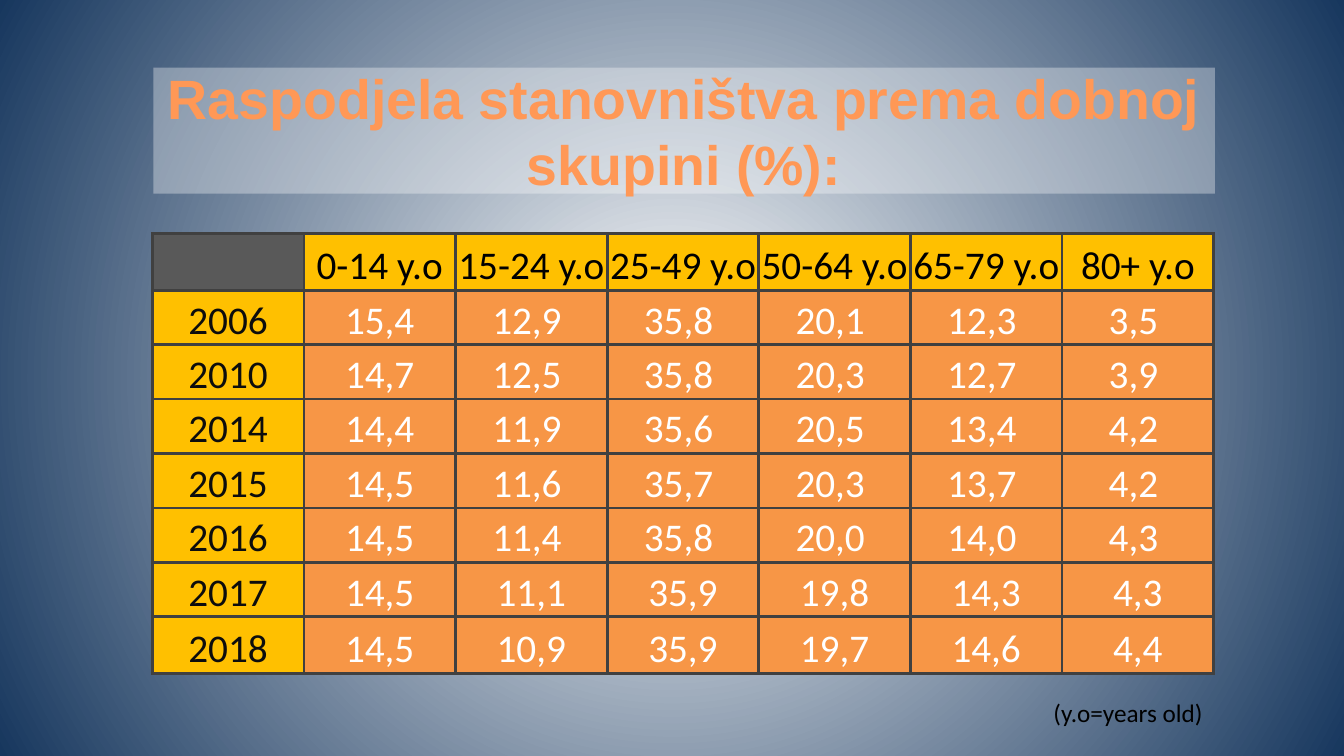
from lxml import etree
from pptx import Presentation
from pptx.dml.color import RGBColor
from pptx.enum.text import MSO_ANCHOR as Anchor, MSO_AUTO_SIZE as AutoSize, PP_ALIGN as Align
from pptx.oxml import parse_xml
from pptx.oxml.ns import nsdecls, qn
from pptx.util import Inches, Pt

COLORS = {
    "center": "FFFFFF", "edge": "17375E", "panel": "FFFFFF", "title": "FF9856",
    "corner": "595959", "header": "FFC000", "body": "F79646", "border": "404040",
    "header_text": "000000", "year_text": "0D0D0D", "value_text": "FFFFFF",
}
NBSP = chr(160)
AGE_GROUPS = ["", "0-14 y.o", "15-24 y.o", "25-49 y.o", "50-64 y.o", "65-79 y.o", "80+ y.o"]
SHARES = [
    ["2006", "15,4", "12,9", "35,8", "20,1", "12,3", "3,5"],
    ["2010", "14,7", "12,5", "35,8", "20,3", "12,7", "3,9"],
    ["2014", "14,4", "11,9", "35,6", "20,5", "13,4", "4,2"],
    ["2015", "14,5", "11,6", "35,7", "20,3", "13,7", "4,2"],
    ["2016", "14,5", "11,4", "35,8", "20,0", "14,0", "4,3"],
    ["2017", "14,5", "11,1", "35,9", "19,8", "14,3", "4,3"],
    ["2018", "14,5", "10,9", "35,9", "19,7", "14,6", "4,4"],
]
LEFT, WIDTH = Inches(1.51), Inches(10.53)


def style_text(paragraph, font_name, size, color, bold=False):
    for run in paragraph.runs:
        run.font.name, run.font.size, run.font.bold = font_name, Pt(size), bold
        run.font.color.rgb = RGBColor.from_string(COLORS[color])


def add_borders(cell):
    properties = cell._tc.get_or_add_tcPr()
    for position, side in enumerate(("lnL", "lnR", "lnT", "lnB")):
        properties.insert(position, parse_xml(
            f'<a:{side} {nsdecls("a")} w="{Pt(2.25)}"><a:solidFill>'
            f'<a:srgbClr val="{COLORS["border"]}"/></a:solidFill></a:{side}>'))


prs = Presentation()
prs.slide_width, prs.slide_height = Inches(13.33), Inches(7.5)
slide = prs.slides.add_slide(prs.slide_layouts[5])

# Radial background
backdrop = slide.background.fill
backdrop.gradient()
for stop, color in zip(backdrop.gradient_stops, ("center", "edge")):
    stop.color.rgb = RGBColor.from_string(COLORS[color])
gradient = slide.element.find(".//" + qn("a:gradFill"))
gradient.replace(gradient.find(qn("a:lin")), parse_xml(
    f'<a:path {nsdecls("a")} path="circle">'
    '<a:fillToRect l="50000" t="50000" r="50000" b="50000"/></a:path>'))

# Title on a translucent panel
title = slide.shapes.title
title.left, title.top, title.width, title.height = Inches(1.52), Inches(0.67), WIDTH, Inches(1.25)
title.fill.solid()
title.fill.fore_color.rgb = RGBColor.from_string(COLORS["panel"])
panel_color = title.element.spPr.find(".//" + qn("a:srgbClr"))
etree.SubElement(panel_color, qn("a:alpha")).set("val", "34000")
title.text_frame.text = "Raspodjela stanovništva prema dobnoj skupini (%):"
title.text_frame.auto_size = AutoSize.NONE
title.text_frame.vertical_anchor = Anchor.MIDDLE
title.text_frame.paragraphs[0].alignment = Align.CENTER
style_text(title.text_frame.paragraphs[0], "Arial", 39.6, "title", bold=True)

# Table of population shares: age groups across, years down
rows = [AGE_GROUPS] + SHARES
population = slide.shapes.add_table(
    len(rows), len(AGE_GROUPS), LEFT, Inches(2.32), WIDTH, Inches(4.35)).table
population.first_row = population.horz_banding = False
for column in population.columns:
    column.width = WIDTH // len(AGE_GROUPS)
for r, values in enumerate(rows):
    population.rows[r].height = Inches(0.56 if r in (0, len(rows) - 1) else 0.54)
    for c, value in enumerate(values):
        if r == 0:
            fill, ink = ("header" if c else "corner"), "header_text"
        elif c == 0:
            fill, ink = "header", "year_text"
        else:
            fill, ink = "body", "value_text"
        # Values up to 2016 carry a trailing hard space, except in the first age group
        if c > 1 and 0 < r < 6:
            value += NBSP
        cell = population.cell(r, c)
        cell.text_frame.text = value
        cell.vertical_anchor = Anchor.BOTTOM
        cell.margin_left = cell.margin_right = cell.margin_top = Inches(0.01)
        cell.margin_bottom = 0
        cell.fill.solid()
        cell.fill.fore_color.rgb = RGBColor.from_string(COLORS[fill])
        cell.text_frame.paragraphs[0].alignment = Align.CENTER
        style_text(cell.text_frame.paragraphs[0], "Calibri", 28, ink)
        add_borders(cell)

# Footnote
footnote = slide.shapes.add_textbox(
    Inches(10.35), Inches(6.87), Inches(1.7), Inches(0.4)).text_frame
footnote.word_wrap = False
footnote.auto_size = AutoSize.SHAPE_TO_FIT_TEXT
footnote.text = "(y.o=years old)"
style_text(footnote.paragraphs[0], "Calibri", 18, "header_text")

prs.save("out.pptx")
